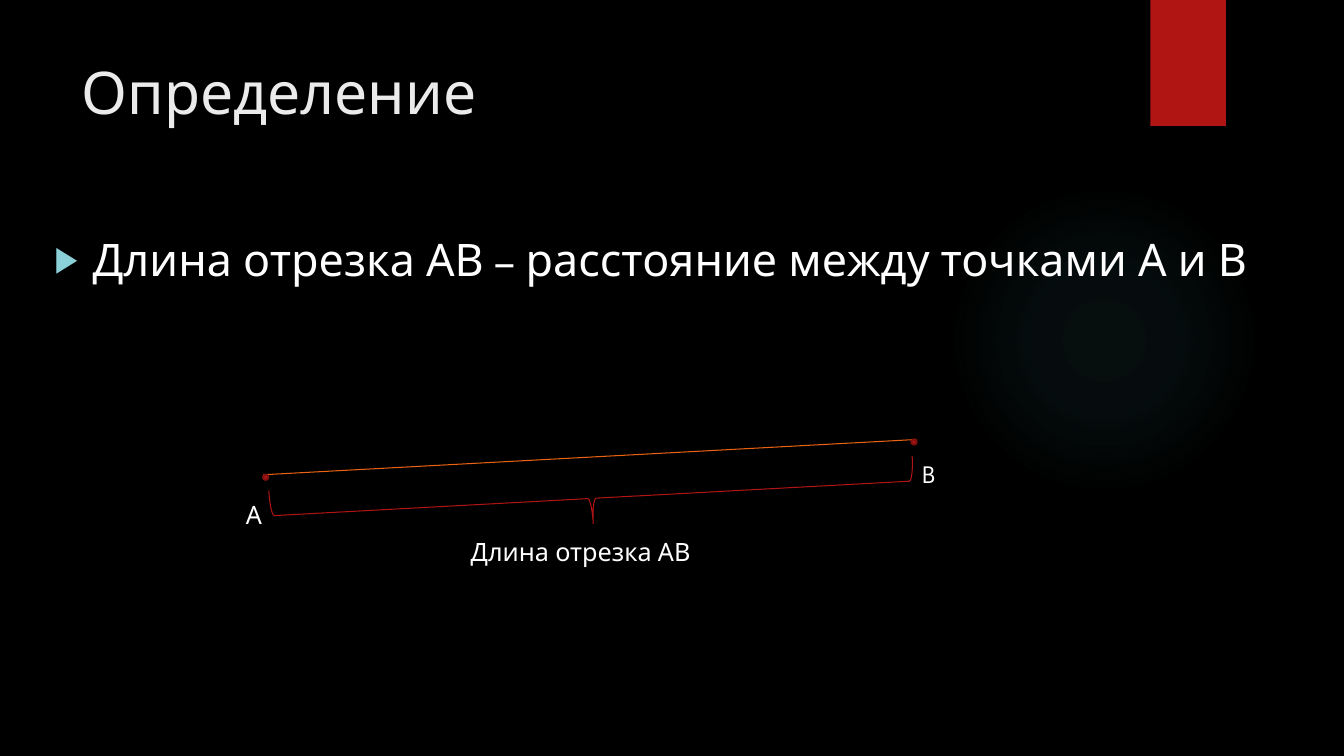
from dataclasses import dataclass

from lxml import etree
from pptx import Presentation
from pptx.dml.color import RGBColor
from pptx.enum.shapes import MSO_CONNECTOR as CONNECTOR, MSO_SHAPE as SHAPE
from pptx.enum.text import MSO_ANCHOR as ANCHOR, MSO_AUTO_SIZE as AUTO_SIZE, PP_ALIGN as ALIGN
from pptx.oxml import parse_xml
from pptx.oxml.ns import nsdecls, qn
from pptx.util import Inches, Pt


@dataclass(frozen=True)
class Theme:
    font: str = "League Spartan"
    background: str = "000000"
    title: str = "EBEBEB"
    text: str = "FFFFFF"
    bullet: str = "8AD0D6"
    accent: str = "B01513"
    point_edge: str = "82100E"
    segment: str = "EA6312"
    glow: str = "50B9C1"
    title_size: int = 42
    body_size: int = 32
    label_size: int = 18


THEME = Theme()


def color(value):
    return RGBColor.from_string(value)


def add_span(para, text, size, value):
    span = para.add_run()
    span.text = text
    span.font.name = THEME.font
    span.font.size = Pt(size)
    span.font.color.rgb = color(value)


def add_title(page, text, left, top, width, height):
    title = page.shapes.title
    title.left, title.top = Inches(left), Inches(top)
    title.width, title.height = Inches(width), Inches(height)
    frame = title.text_frame
    frame.word_wrap = True
    frame.auto_size = AUTO_SIZE.NONE
    frame.vertical_anchor = ANCHOR.TOP
    para = frame.paragraphs[0]
    para.alignment = ALIGN.LEFT
    add_span(para, text, THEME.title_size, THEME.title)


def add_text(page, text, left, top, width, height, size):
    box = page.shapes.add_textbox(Inches(left), Inches(top), Inches(width), Inches(height))
    box.text_frame.word_wrap = True
    para = box.text_frame.paragraphs[0]
    add_span(para, text, size, THEME.text)
    return para


def add_bullet(para):
    properties = para._p.get_or_add_pPr()
    indent = Inches(0.38)
    properties.set("marL", str(indent))
    properties.set("indent", str(-indent))
    bullet_color = etree.SubElement(properties, qn("a:buClr"))
    etree.SubElement(bullet_color, qn("a:srgbClr"), val=THEME.bullet)
    etree.SubElement(properties, qn("a:buSzPct"), val="80000")
    etree.SubElement(properties, qn("a:buFont"), typeface="Arial")
    etree.SubElement(properties, qn("a:buChar"), char="▶")


def add_figure(page, kind, left, top, width, height, fill=None, line=None, weight=0.75):
    figure = page.shapes.add_shape(
        kind, Inches(left), Inches(top), Inches(width), Inches(height))
    figure.shadow.inherit = False
    if fill:
        figure.fill.solid()
        figure.fill.fore_color.rgb = color(fill)
    else:
        figure.fill.background()
    if line:
        figure.line.color.rgb = color(line)
        figure.line.width = Pt(weight)
    else:
        figure.line.fill.background()
    return figure


def add_glow(page):
    """Add a faint round light that fades out from its centre."""
    glow = add_figure(page, SHAPE.OVAL, 9.41, 1.83, 3.08, 3.08)
    stops = "".join(
        f'<a:gs pos="{place * 1000}"><a:srgbClr val="{THEME.glow}">'
        f'<a:alpha val="{alpha * 1000}"/></a:srgbClr></a:gs>'
        for place, alpha in ((0, 7), (36, 6), (69, 0)))
    gradient = parse_xml(
        f'<a:gradFill {nsdecls("a")} rotWithShape="1"><a:gsLst>{stops}</a:gsLst>'
        '<a:path path="circle"><a:fillToRect l="50000" t="50000" r="50000" b="50000"/>'
        '</a:path></a:gradFill>')
    properties = glow._element.spPr
    properties.replace(properties.find(qn("a:noFill")), gradient)


def add_ribbon(page):
    ribbon = add_figure(page, SHAPE.RECTANGLE, 11.41, 0, 0.75, 1.25, fill=THEME.accent)
    effects = ribbon._element.spPr.find(qn("a:effectLst"))
    effects.append(parse_xml(
        f'<a:outerShdw {nsdecls("a")} blurRad="{Pt(3)}" dist="{Pt(2)}" dir="5400000" '
        'rotWithShape="0"><a:srgbClr val="000000"><a:alpha val="45000"/></a:srgbClr>'
        '</a:outerShdw>'))


def add_segment(page, start, end):
    segment = page.shapes.add_connector(
        CONNECTOR.STRAIGHT, *(Inches(length) for length in (*start, *end)))
    segment.line.color.rgb = color(THEME.segment)
    segment.line.width = Pt(0.75)
    etree.SubElement(segment._element.spPr, qn("a:effectLst"))


def add_point(page, left, top):
    add_figure(page, SHAPE.OVAL, left, top, 0.05, 0.05,
               fill=THEME.accent, line=THEME.point_edge, weight=1.5)


def add_label(page, text, left, top, width):
    add_text(page, text, left, top, width, 0.4, THEME.label_size)


def main():
    deck = Presentation()
    deck.slide_width, deck.slide_height = Inches(13.33), Inches(7.5)
    page = deck.slides.add_slide(deck.slide_layouts[5])
    page.background.fill.solid()
    page.background.fill.fore_color.rgb = color(THEME.background)

    add_glow(page)
    add_ribbon(page)
    add_title(page, "Определение", 0.71, 0.5, 10.29, 1.53)
    definition = add_text(page, "Длина отрезка АВ – расстояние между точками А и В",
                          0.44, 2.25, 12.62, 4.59, THEME.body_size)
    add_bullet(definition)

    add_segment(page, (2.61, 4.71), (9.09, 4.36))
    add_label(page, "А", 2.34, 4.9, 0.53)
    add_label(page, "B", 9.05, 4.5, 0.66)
    add_point(page, 2.61, 4.71)
    add_point(page, 9.04, 4.36)
    brace = add_figure(page, SHAPE.RIGHT_BRACE, 5.62, 1.75, 0.5, 6.39, line=THEME.accent)
    brace.rotation = 86.9
    add_label(page, "Длина отрезка АВ", 4.57, 5.27, 3.06)

    deck.save("out.pptx")


if __name__ == "__main__":
    main()
